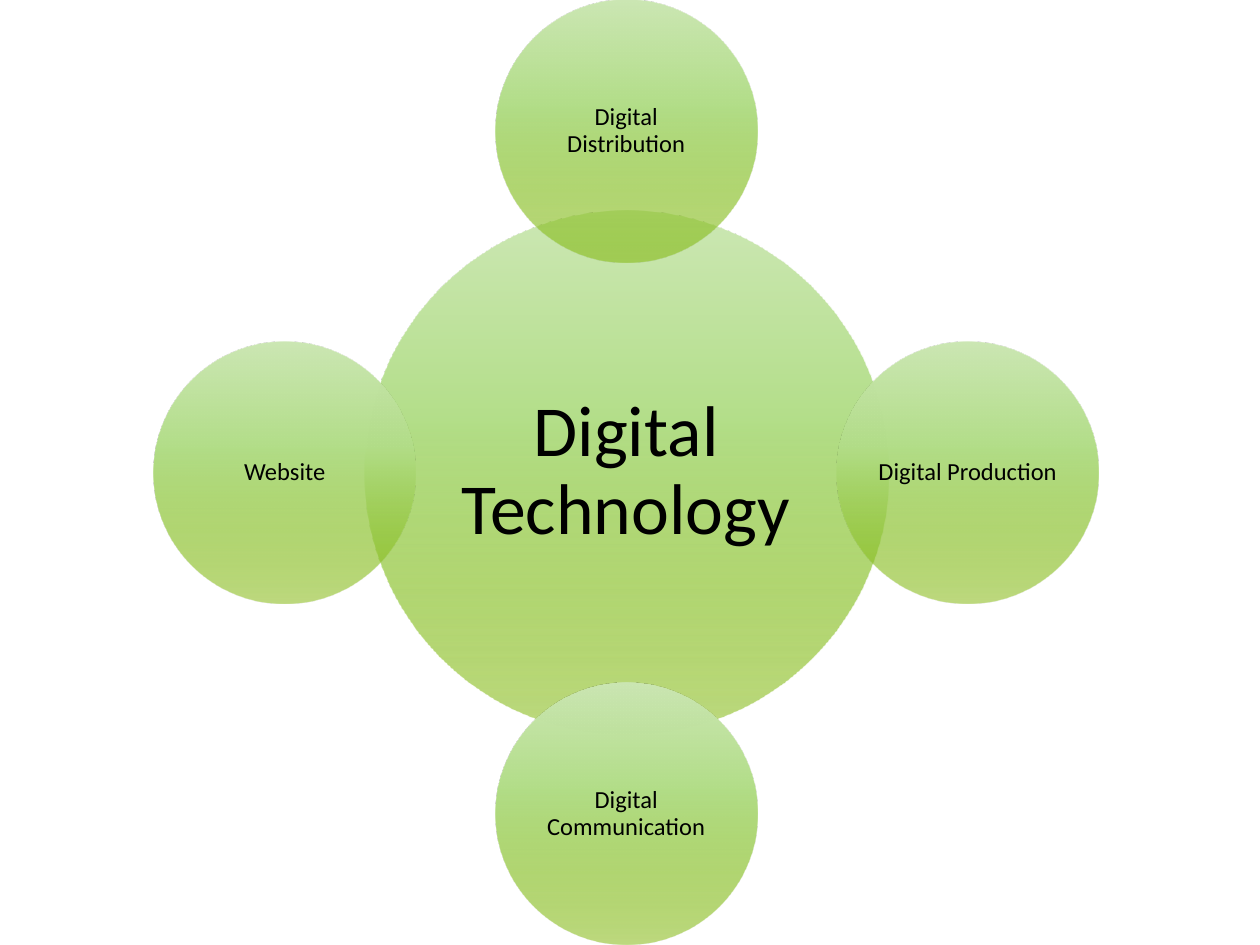
"""Build a radial diagram of digital technology and its four branches."""
import dataclasses

import lxml.etree
import pptx
import pptx.dml.color
import pptx.enum.shapes
import pptx.enum.text
import pptx.oxml.ns
import pptx.util

Inches = pptx.util.Inches


@dataclasses.dataclass(frozen=True)
class Theme:
    font: str = "Calibri"
    ink: str = "000000"
    hub_size: int = 41
    branch_size: int = 14
    gradient: tuple = ((0, "CCE7B4", 100), (40, "B3DE89", 100), (100, "7CB400", 50))
    angle: int = 90


class RadialSlide:
    def __init__(self, slide, theme):
        self.slide = slide
        self.theme = theme

    def shade(self, circle):
        circle.fill.background()
        properties = circle._element.spPr
        tag = pptx.oxml.ns.qn
        gradient = lxml.etree.Element(tag("a:gradFill"), rotWithShape="1")
        stops = lxml.etree.SubElement(gradient, tag("a:gsLst"))
        for position, color, opacity in self.theme.gradient:
            stop = lxml.etree.SubElement(stops, tag("a:gs"), pos=str(position * 1000))
            shade = lxml.etree.SubElement(stop, tag("a:srgbClr"), val=color)
            if opacity < 100:
                lxml.etree.SubElement(shade, tag("a:alpha"), val=str(opacity * 1000))
        lxml.etree.SubElement(gradient, tag("a:lin"), ang=str(self.theme.angle * 60000), scaled="0")
        properties.replace(properties.find(tag("a:noFill")), gradient)

    def circle(self, center_x, center_y, diameter, label, size, inset):
        circle = self.slide.shapes.add_shape(
            pptx.enum.shapes.MSO_SHAPE.OVAL,
            Inches(center_x - diameter / 2), Inches(center_y - diameter / 2),
            Inches(diameter), Inches(diameter))
        circle.shadow.inherit = False
        self.shade(circle)
        circle.line.fill.background()
        frame = circle.text_frame
        frame.word_wrap = True
        frame.vertical_anchor = pptx.enum.text.MSO_ANCHOR.MIDDLE
        frame.margin_left = frame.margin_right = Inches(inset)
        frame.margin_top = frame.margin_bottom = Inches(inset)
        paragraph = frame.paragraphs[0]
        paragraph.text = label
        paragraph.alignment = pptx.enum.text.PP_ALIGN.CENTER
        paragraph.line_spacing = 0.9
        paragraph.font.name = self.theme.font
        paragraph.font.size = pptx.util.Pt(size)
        paragraph.font.color.rgb = pptx.dml.color.RGBColor.from_string(self.theme.ink)


def main():
    presentation = pptx.Presentation()
    presentation.slide_width = Inches(10)
    presentation.slide_height = Inches(7.5)
    theme = Theme()
    diagram = RadialSlide(presentation.slides.add_slide(presentation.slide_layouts[6]), theme)

    hub_x, hub_y = 4.97, 3.75
    hub_diameter = 4.16
    branch_diameter = hub_diameter / 2
    orbit = hub_y - branch_diameter / 2
    branches = (
        ("Digital Distribution", 0, -1),
        ("Digital Production", 1, 0),
        ("Digital Communication", 0, 1),
        ("Website", -1, 0),
    )

    diagram.circle(hub_x, hub_y, hub_diameter, "Digital Technology", theme.hub_size, 0.06)
    for label, across, down in branches:
        diagram.circle(hub_x + across * orbit, hub_y + down * orbit,
                       branch_diameter, label, theme.branch_size, 0.02)

    presentation.save("out.pptx")


if __name__ == "__main__":
    main()
